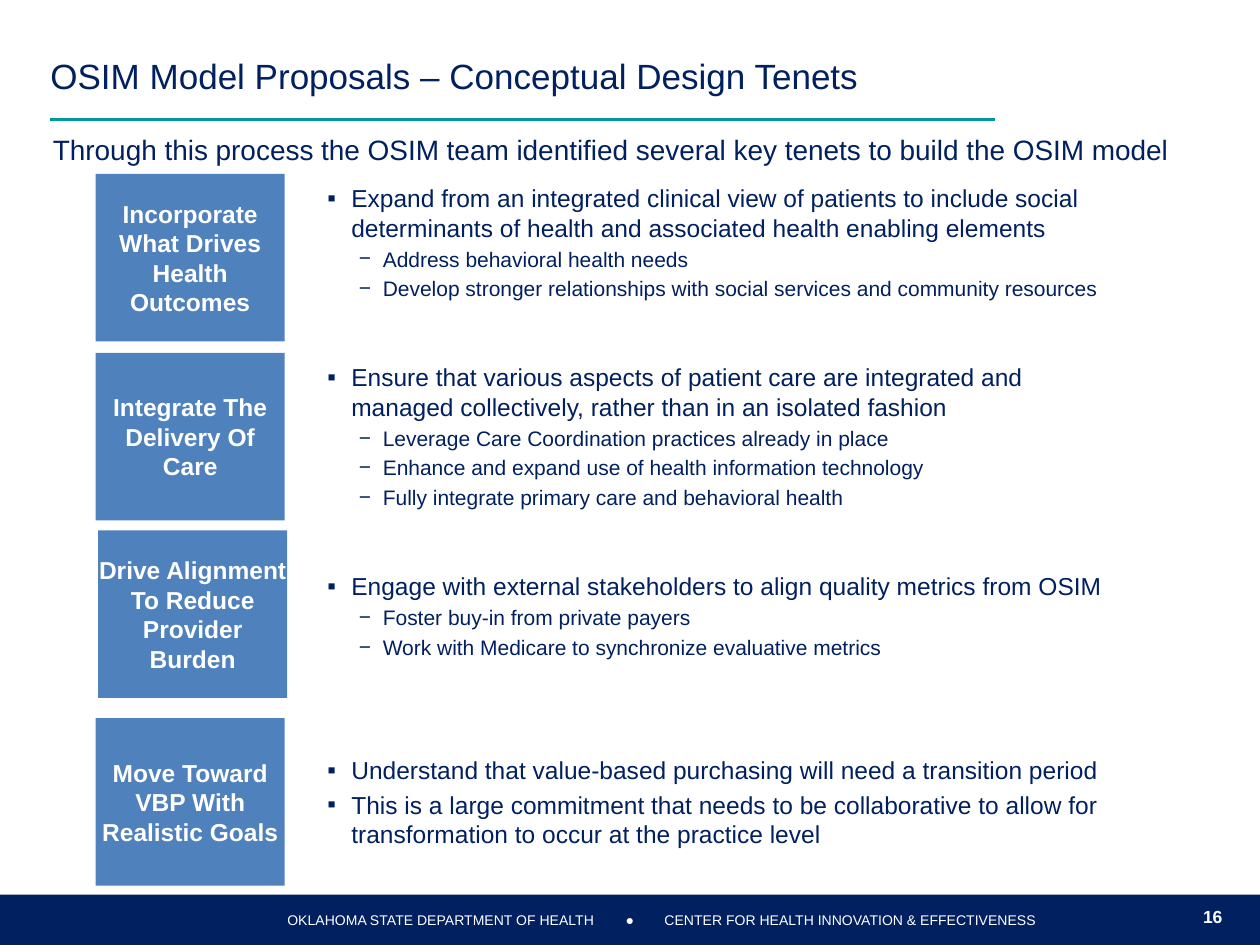
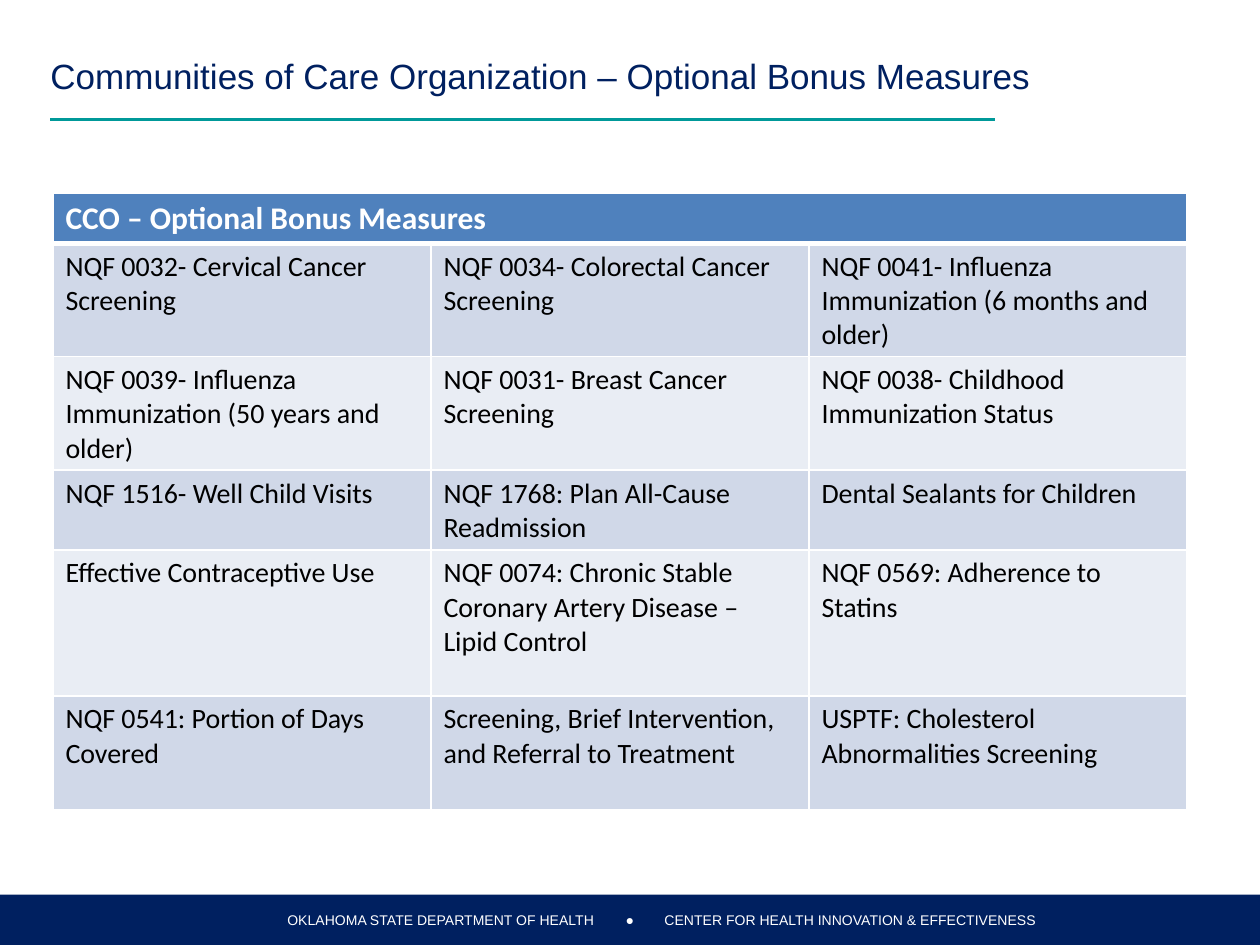
from dataclasses import dataclass

from lxml.etree import SubElement
from pptx import Presentation
from pptx.dml.color import RGBColor
from pptx.enum.shapes import MSO_CONNECTOR, MSO_SHAPE
from pptx.enum.text import MSO_ANCHOR, PP_ALIGN
from pptx.oxml import parse_xml
from pptx.oxml.ns import nsdecls, qn
from pptx.util import Inches, Pt


@dataclass(frozen=True)
class Theme:
    font: str = "Arial"
    table_font: str = "Calibri"
    navy: str = "002060"
    teal: str = "009999"
    blue: str = "4F81BD"
    band_dark: str = "D0D8E8"
    band_light: str = "E9EDF4"
    white: str = "FFFFFF"
    black: str = "000000"
    title_size: int = 20
    header_size: int = 18
    lead_size: int = 16
    body_size: int = 14
    detail_size: int = 12
    number_size: int = 10
    footer_size: int = 8


@dataclass(frozen=True)
class Box:
    left: float
    top: float
    width: float
    height: float

    def inner(self, left, top, width, height):
        return Box(self.left + left, self.top + top, width, height)

    def lengths(self):
        return [Inches(value) for value in (self.left, self.top, self.width, self.height)]


THEME = Theme()
PAGE = Box(0, 0, 10, 7.5)
TITLE = Box(0.4, 0.25, 9.2, 0.7)
FOOTER = Box(0, 7.1, 10, 0.4)
LEAD = Box(0.42, 1, 9.2, 0.5)
TENETS = Box(0.76, 1.38, 8.24, 5.65)
MEASURES = Box(0.42, 1.53, 9, 4.89)
ROW_HEIGHTS = [0.4, 0.9, 0.9, 0.63, 1.16, 0.9]
BULLETS = ["▪", "−"]
INDENTS = [0.19, 0.44]
HANGING = 0.19


@dataclass(frozen=True)
class Tenet:
    label: str
    points: list
    label_top: float
    points_top: float
    points_height: float
    label_shift: float = 0


TENET_LIST = [
    Tenet("Incorporate What Drives Health Outcomes", [
        (0, "Expand from an integrated clinical view of patients to include social "
            "determinants of health and associated health enabling elements"),
        (1, "Address behavioral health needs"),
        (1, "Develop stronger relationships with social services and community resources"),
    ], 0, 0, 1.08),
    Tenet("Integrate The Delivery Of Care", [
        (0, "Ensure that various aspects of patient care are integrated and managed "
            "collectively, rather than in an isolated fashion"),
        (1, "Leverage Care Coordination practices already in place"),
        (1, "Enhance and expand use of health information technology"),
        (1, "Fully integrate primary care and behavioral health"),
    ], 1.42, 1.33, 1.5),
    Tenet("Drive Alignment To Reduce Provider Burden", [
        (0, "Engage with external stakeholders to align quality metrics from OSIM"),
        (1, "Foster buy-in from private payers"),
        (1, "Work with Medicare to synchronize evaluative metrics"),
    ], 2.83, 2.92, 1.17, 0.02),
    Tenet("Move Toward VBP With Realistic Goals", [
        (0, "Understand that value-based purchasing will need a transition period"),
        (0, "This is a large commitment that needs to be collaborative to allow for "
            "transformation to occur at the practice level"),
    ], 4.32, 4.4, 1.17),
]

MEASURE_ROWS = [
    ["NQF 0032- Cervical Cancer Screening",
     "NQF 0034- Colorectal Cancer Screening",
     "NQF 0041- Influenza Immunization (6 months and older)"],
    ["NQF 0039- Influenza Immunization (50 years and older)",
     "NQF 0031- Breast Cancer Screening",
     "NQF 0038- Childhood Immunization Status"],
    ["NQF 1516- Well Child Visits",
     "NQF 1768: Plan All-Cause Readmission",
     "Dental Sealants for Children"],
    ["Effective Contraceptive Use",
     "NQF 0074: Chronic Stable Coronary Artery Disease – Lipid Control",
     "NQF 0569: Adherence to Statins"],
    ["NQF 0541: Portion of Days Covered",
     "Screening, Brief Intervention, and Referral to Treatment",
     "USPTF: Cholesterol Abnormalities Screening"],
]


def write_text(paragraph, text, size=THEME.body_size, color=THEME.navy, bold=False,
               font=THEME.font, align=PP_ALIGN.LEFT):
    paragraph.alignment = align
    run = paragraph.add_run()
    run.text = text
    run.font.size = Pt(size)
    run.font.name = font
    run.font.bold = bold
    run.font.color.rgb = RGBColor.from_string(color)


def set_frame(frame, insets=(0.1, 0.05), anchor=MSO_ANCHOR.MIDDLE, wrap=True):
    frame.word_wrap = wrap
    frame.vertical_anchor = anchor
    frame.margin_left = frame.margin_right = Inches(insets[0])
    frame.margin_top = frame.margin_bottom = Inches(insets[1])


def add_text(slide, box, text, insets=(0, 0.05), anchor=MSO_ANCHOR.MIDDLE, wrap=True,
             **text_format):
    frame = slide.shapes.add_textbox(*box.lengths()).text_frame
    set_frame(frame, insets, anchor, wrap)
    write_text(frame.paragraphs[0], text, **text_format)


def add_rectangle(slide, box, color):
    shape = slide.shapes.add_shape(MSO_SHAPE.RECTANGLE, *box.lengths())
    shape.shadow.inherit = False
    shape.fill.solid()
    shape.fill.fore_color.rgb = RGBColor.from_string(color)
    shape.line.fill.background()
    return shape


def add_title(slide, box, text):
    bottom = Inches(box.top + box.height)
    rule = slide.shapes.add_connector(
        MSO_CONNECTOR.STRAIGHT, Inches(box.left), bottom, Inches(box.left + 7.5), bottom)
    rule.line.color.rgb = RGBColor.from_string(THEME.teal)
    rule.line.width = Pt(2)
    SubElement(rule._element.spPr, qn("a:effectLst"))
    add_text(slide, box, text, size=THEME.title_size)


def add_footer(slide, box, number=None):
    add_rectangle(slide, box, THEME.navy)
    credits = [
        (2, 3, "OKLAHOMA STATE DEPARTMENT OF HEALTH"),
        (4.75, 0.5, "●"),
        (5.25, 3, "CENTER FOR HEALTH INNOVATION & EFFECTIVENESS"),
    ]
    for left, width, text in credits:
        add_text(slide, box.inner(left, 0, width, box.height), text, insets=(0, 0),
                 wrap=False, size=THEME.footer_size, color=THEME.white,
                 align=PP_ALIGN.CENTER)
    if number:
        add_text(slide, box.inner(9.5, 0.05, 0.25, 0.25), number, insets=(0, 0),
                 wrap=False, size=THEME.number_size, color=THEME.white, bold=True,
                 align=PP_ALIGN.CENTER)


def set_bullet(paragraph, level):
    paragraph.level = level
    properties = paragraph._p.get_or_add_pPr()
    properties.set("marL", str(Inches(INDENTS[level])))
    properties.set("indent", str(-Inches(HANGING)))
    color = SubElement(properties, qn("a:buClr"))
    SubElement(color, qn("a:srgbClr"), val=THEME.navy)
    SubElement(properties, qn("a:buFont"), typeface=THEME.font)
    SubElement(properties, qn("a:buChar"), char=BULLETS[level])


def add_points(slide, box, points):
    frame = slide.shapes.add_textbox(*box.lengths()).text_frame
    set_frame(frame)
    for index, (level, text) in enumerate(points):
        paragraph = frame.add_paragraph() if index else frame.paragraphs[0]
        size = THEME.detail_size if level else THEME.body_size
        set_bullet(paragraph, level)
        if index:
            paragraph.space_before = Pt(size * 0.2)
        write_text(paragraph, text, size=size)


def add_tenet(slide, box, tenet):
    label = add_rectangle(
        slide, box.inner(tenet.label_shift, tenet.label_top, 1.5, 1.33), THEME.blue)
    set_frame(label.text_frame, (0, 0))
    write_text(label.text_frame.paragraphs[0], tenet.label, color=THEME.white, bold=True,
               align=PP_ALIGN.CENTER)
    add_points(slide, box.inner(1.74, tenet.points_top, 6.5, tenet.points_height),
               tenet.points)


def style_cell(cell, fill, top=1, bottom=1):
    cell.fill.solid()
    cell.fill.fore_color.rgb = RGBColor.from_string(fill)
    properties = cell._tc.get_or_add_tcPr()
    for index, (side, width) in enumerate(zip("LRTB", (1, 1, top, bottom))):
        properties.insert(index, parse_xml(
            f'<a:ln{side} {nsdecls("a")} w="{Pt(width)}"><a:solidFill>'
            f'<a:srgbClr val="{THEME.white}"/></a:solidFill></a:ln{side}>'))


def add_measures(slide, box, heading, rows):
    columns = len(rows[0])
    table = slide.shapes.add_table(len(rows) + 1, columns, *box.lengths()).table
    for column in table.columns:
        column.width = Inches(box.width / columns)
    for row, height in zip(table.rows, ROW_HEIGHTS):
        row.height = Inches(height)
    for cell in table.rows[0].cells:
        style_cell(cell, THEME.blue, bottom=3)
    header = table.cell(0, 0)
    header.merge(table.cell(0, columns - 1))
    write_text(header.text_frame.paragraphs[0], heading, size=THEME.header_size,
               color=THEME.white, bold=True, font=THEME.table_font)
    for row_index, measures in enumerate(rows, 1):
        fill = THEME.band_dark if row_index % 2 else THEME.band_light
        for column_index, measure in enumerate(measures):
            cell = table.cell(row_index, column_index)
            style_cell(cell, fill, top=3 if row_index == 1 else 1)
            write_text(cell.text_frame.paragraphs[0], measure, size=THEME.lead_size,
                       color=THEME.black, font=THEME.table_font)


def start_slide(presentation, title, number=None):
    slide = presentation.slides.add_slide(presentation.slide_layouts[6])
    add_footer(slide, FOOTER, number)
    add_title(slide, TITLE, title)
    return slide


def build_tenets_slide(presentation):
    slide = start_slide(presentation, "OSIM Model Proposals – Conceptual Design Tenets", "16")
    add_text(slide, LEAD, "Through this process the OSIM team identified several key tenets "
             "to build the OSIM model", anchor=MSO_ANCHOR.TOP, size=THEME.lead_size)
    for tenet in TENET_LIST:
        add_tenet(slide, TENETS, tenet)


def build_measures_slide(presentation):
    slide = start_slide(
        presentation, "Communities of Care Organization – Optional Bonus Measures")
    add_measures(slide, MEASURES, "CCO – Optional Bonus Measures", MEASURE_ROWS)


def main():
    presentation = Presentation()
    presentation.slide_width = Inches(PAGE.width)
    presentation.slide_height = Inches(PAGE.height)
    build_tenets_slide(presentation)
    build_measures_slide(presentation)
    presentation.save("out.pptx")


if __name__ == "__main__":
    main()
